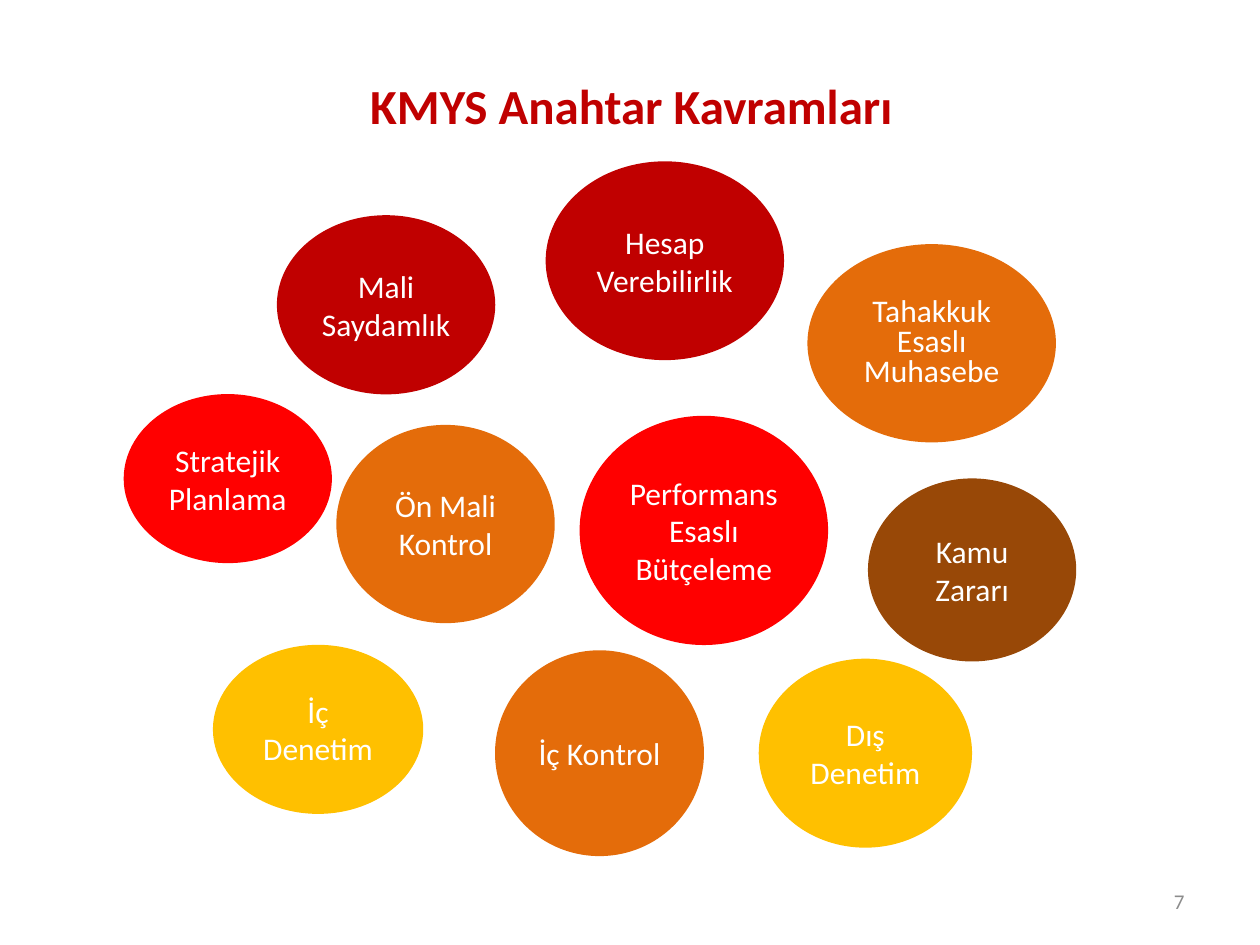
from pptx import Presentation
from pptx.dml.color import RGBColor
from pptx.enum import shapes, text
from pptx.util import Pt

THEME = {
    "font": "Calibri",
    "title_size": 28, "bubble_size": 18, "number_size": 12,
    "white": "FFFFFF", "grey": "8C8C8C", "dark_red": "C00000", "red": "FF0000",
    "orange": "E46C0A", "gold": "FFC000", "brown": "984807",
}

# Content: lengths in points as left, top, width, height
TITLE = ("KMYS Anahtar Kavramları", (36.7, 20.9, 648, 78.5))
PAGE_NUMBER = ("7", (516, 500.5, 168, 28.8))
CONCEPTS = [
    ("Performans Esaslı Bütçeleme", "red", (331.2, 237.6, 142, 131)),
    ("Mali Saydamlık", "dark_red", (158.2, 123, 124.8, 102.4)),
    ("Hesap Verebilirlik", "dark_red", (311.8, 92.2, 136.2, 113.6)),
    ("İç Kontrol", "orange", (282.9, 371.6, 119.4, 117.6)),
    ("Tahakkuk Esaslı Muhasebe", "orange", (461.4, 139.5, 142, 113.3)),
    ("İç Denetim", "gold", (121.7, 368.5, 120.2, 96.6)),
    ("Stratejik Planlama", "red", (70.7, 225.2, 119, 96.6)),
    ("Dış Denetim", "gold", (433.6, 376.4, 121.9, 108)),
    ("Ön Mali Kontrol", "orange", (192.2, 242.8, 124.8, 113.3)),
    ("Kamu Zararı", "brown", (496, 273.4, 119, 104.6)),
]
TIGHT_SPACING = {"Tahakkuk Esaslı Muhasebe": 0.8}


def place(shape, box):
    for name, value in zip(("left", "top", "width", "height"), box):
        setattr(shape, name, Pt(value))


def write(shape, words, size, color, align="CENTER", bold=False, spacing=None):
    frame = shape.text_frame
    frame.word_wrap = True
    frame.vertical_anchor = text.MSO_ANCHOR.MIDDLE
    para = frame.paragraphs[0]
    para.alignment = getattr(text.PP_ALIGN, align)
    if spacing:
        para.line_spacing = spacing
    span = para.add_run()
    span.text = words
    formats = {"name": THEME["font"], "size": Pt(THEME[size]), "bold": bold}
    for name, value in formats.items():
        setattr(span.font, name, value)
    span.font.color.rgb = RGBColor.from_string(THEME[color])


def main():
    deck = Presentation()
    deck.slide_width, deck.slide_height = Pt(720), Pt(540)
    page = deck.slides.add_slide(deck.slide_layouts[5])

    # Title
    words, box = TITLE
    place(page.shapes.title, box)
    write(page.shapes.title, words, "title_size", "dark_red", bold=True)

    # Page number
    words, box = PAGE_NUMBER
    number = page.shapes.add_textbox(*map(Pt, box))
    write(number, words, "number_size", "grey", align="RIGHT")

    # Concept bubbles
    for words, color, box in CONCEPTS:
        bubble = page.shapes.add_shape(shapes.MSO_SHAPE.OVAL, *map(Pt, box))
        bubble.shadow.inherit = False
        bubble.fill.solid()
        bubble.fill.fore_color.rgb = RGBColor.from_string(THEME[color])
        bubble.line.fill.background()
        write(bubble, words, "bubble_size", "white", spacing=TIGHT_SPACING.get(words))

    deck.save("out.pptx")


if __name__ == "__main__":
    main()
